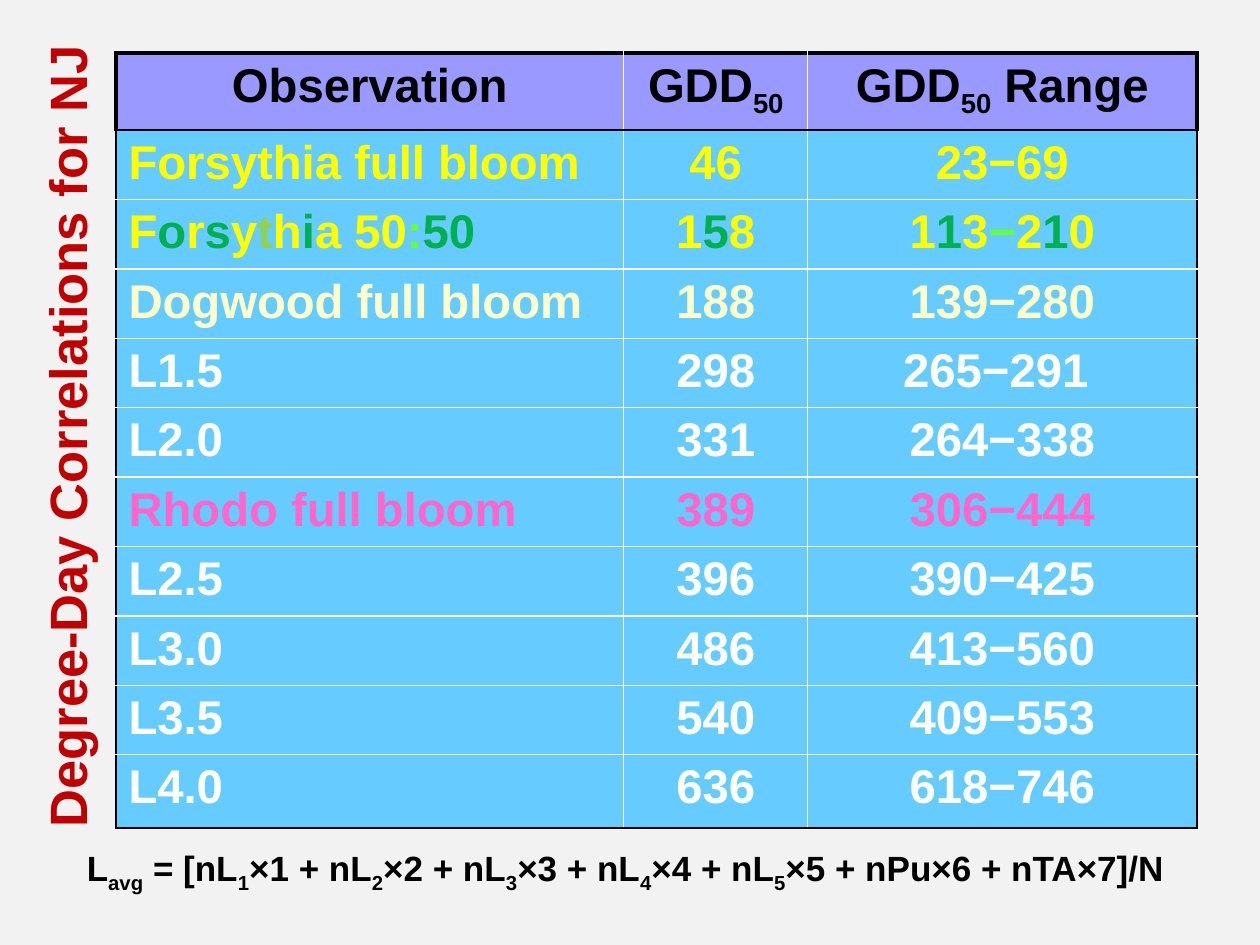
from dataclasses import dataclass
from typing import Any

from lxml.etree import SubElement
from pptx import Presentation
from pptx.dml.color import RGBColor
from pptx.enum.text import MSO_ANCHOR, MSO_AUTO_SIZE, PP_ALIGN
from pptx.oxml.ns import qn
from pptx.util import Inches, Pt


@dataclass(frozen=True)
class Theme:
    font: str = "Arial"
    background: str = "F2F2F2"
    title: str = "C00000"
    ink: str = "000000"
    header: str = "9999FF"
    body: str = "66CCFF"
    white: str = "FFFFFF"
    yellow: str = "FFFF00"
    green: str = "00B050"
    leaf: str = "92D050"
    lime: str = "66FF33"
    cream: str = "FFFFCC"
    pink: str = "FF66CC"
    title_size: float = 30
    table_size: float = 27
    formula_size: float = 20
    inner_line: float = 1
    frame_line: float = 1.5
    header_line: float = 2.25


THEME = Theme()


@dataclass(frozen=True)
class Piece:
    text: str
    colour: str
    subscript: bool = False


@dataclass(frozen=True)
class Observation:
    cells: tuple[tuple[Piece, ...], ...]


def with_subscripts(text: str, colour: str = THEME.ink) -> tuple[Piece, ...]:
    return tuple(Piece(part, colour, index % 2 == 1) for index, part in enumerate(text.split("|")))


def plain(*texts: str, colour: str = THEME.white) -> Observation:
    return Observation(tuple((Piece(text, colour),) for text in texts))


def mixed(text: str, colours: str) -> tuple[Piece, ...]:
    palette = {"y": THEME.yellow, "g": THEME.green, "l": THEME.leaf, "m": THEME.lime}
    return tuple(Piece(part, palette[key]) for part, key in zip(text.split("|"), colours))


HEADER = Observation(tuple(with_subscripts(text) for text in ("Observation", "GDD|50", "GDD|50| Range")))
ROWS = (
    HEADER,
    plain("Forsythia full bloom", "46", "23−69", colour=THEME.yellow),
    Observation((
        mixed("F|o|r|s|y|t|h|i|a 50|:|50", "ygygylygymg"),
        mixed("1|5|8", "ygy"),
        mixed("1|1|3|−|2|1|0", "ygymygy"),
    )),
    plain("Dogwood full bloom", "188", "139−280", colour=THEME.cream),
    plain("L1.5", "298", "265−291 "),
    plain("L2.0", "331", "264−338"),
    plain("Rhodo full bloom", "389", "306−444", colour=THEME.pink),
    plain("L2.5", "396", "390−425"),
    plain("L3.0", "486", "413−560"),
    plain("L3.5", "540", "409−553"),
    plain("L4.0", "636", "618−746"),
)
COLUMN_WIDTHS = (4.03, 1.46, 3.09)
ROW_HEIGHTS = (0.61, *[0.55] * 9, 0.58)


def apply(target: Any, values: dict[str, Any]) -> None:
    for name, value in values.items():
        setattr(target, name, value)


def write(para: Any, pieces: tuple[Piece, ...], size: float, align: PP_ALIGN) -> None:
    para.alignment = align
    for piece in pieces:
        span = para.add_run()
        span.text = piece.text
        apply(span.font, {"name": THEME.font, "size": Pt(size), "bold": True})
        span.font.color.rgb = RGBColor.from_string(piece.colour)
        if piece.subscript:
            span.font._element.set("baseline", "-25000")


def draw_border(cell: Any, side: str, colour: str, width: float) -> None:
    line = SubElement(cell._tc.get_or_add_tcPr(), qn(f"a:ln{side}"), w=str(Pt(width)))
    fill = SubElement(line, qn("a:solidFill"))
    SubElement(fill, qn("a:srgbClr"), val=colour)


def frame_cell(cell: Any, row: int, column: int) -> None:
    inner = (THEME.white, THEME.inner_line)
    frame = (THEME.ink, THEME.frame_line)
    outer = (THEME.ink, THEME.header_line) if row == 0 else frame
    borders = {
        "L": outer if column == 0 else inner,
        "R": outer if column == len(COLUMN_WIDTHS) - 1 else inner,
        "T": outer if row <= 1 else inner,
        "B": frame if row in (0, len(ROWS) - 1) else inner,
    }
    for side, (colour, width) in borders.items():
        draw_border(cell, side, colour, width)


def draw_title(slide: Any) -> None:
    box = slide.shapes.title
    apply(box, {"left": Inches(-2.76), "top": Inches(3.16), "width": Inches(6.58),
                "height": Inches(0.61), "rotation": 270})
    apply(box.text_frame, {"word_wrap": True, "auto_size": MSO_AUTO_SIZE.SHAPE_TO_FIT_TEXT,
                           "vertical_anchor": MSO_ANCHOR.TOP})
    pieces = (Piece("Degree-Day Correlations for NJ", THEME.title),)
    write(box.text_frame.paragraphs[0], pieces, THEME.title_size, PP_ALIGN.CENTER)


def draw_table(slide: Any) -> None:
    table = slide.shapes.add_table(
        len(ROWS), len(COLUMN_WIDTHS), Inches(0.92), Inches(0.42),
        Inches(sum(COLUMN_WIDTHS)), Inches(sum(ROW_HEIGHTS)),
    ).table
    apply(table, {"first_row": False, "horz_banding": False})
    for column, width in zip(table.columns, COLUMN_WIDTHS):
        column.width = Inches(width)
    for row, height in zip(table.rows, ROW_HEIGHTS):
        row.height = Inches(height)
    for row, observation in enumerate(ROWS):
        for column, pieces in enumerate(observation.cells):
            cell = table.cell(row, column)
            frame_cell(cell, row, column)
            cell.fill.solid()
            cell.fill.fore_color.rgb = RGBColor.from_string(THEME.body if row else THEME.header)
            align = PP_ALIGN.LEFT if row and column == 0 else PP_ALIGN.CENTER
            write(cell.text_frame.paragraphs[0], pieces, THEME.table_size, align)


def draw_formula(slide: Any) -> None:
    box = slide.shapes.add_textbox(Inches(0.59), Inches(6.67), Inches(8.91), Inches(0.44))
    apply(box.text_frame, {"word_wrap": False, "auto_size": MSO_AUTO_SIZE.SHAPE_TO_FIT_TEXT})
    terms = " + ".join(f"nL|{level}|×{level}" for level in range(1, 6))
    formula = f"L|avg| = [{terms} + nPu×6 + nTA×7]/N"
    write(box.text_frame.paragraphs[0], with_subscripts(formula), THEME.formula_size, PP_ALIGN.LEFT)


def main() -> None:
    deck = Presentation()
    apply(deck, {"slide_width": Inches(10), "slide_height": Inches(7.5)})
    slide = deck.slides.add_slide(deck.slide_layouts[5])
    slide.background.fill.solid()
    slide.background.fill.fore_color.rgb = RGBColor.from_string(THEME.background)
    draw_title(slide)
    draw_table(slide)
    draw_formula(slide)
    deck.save("out.pptx")


if __name__ == "__main__":
    main()
